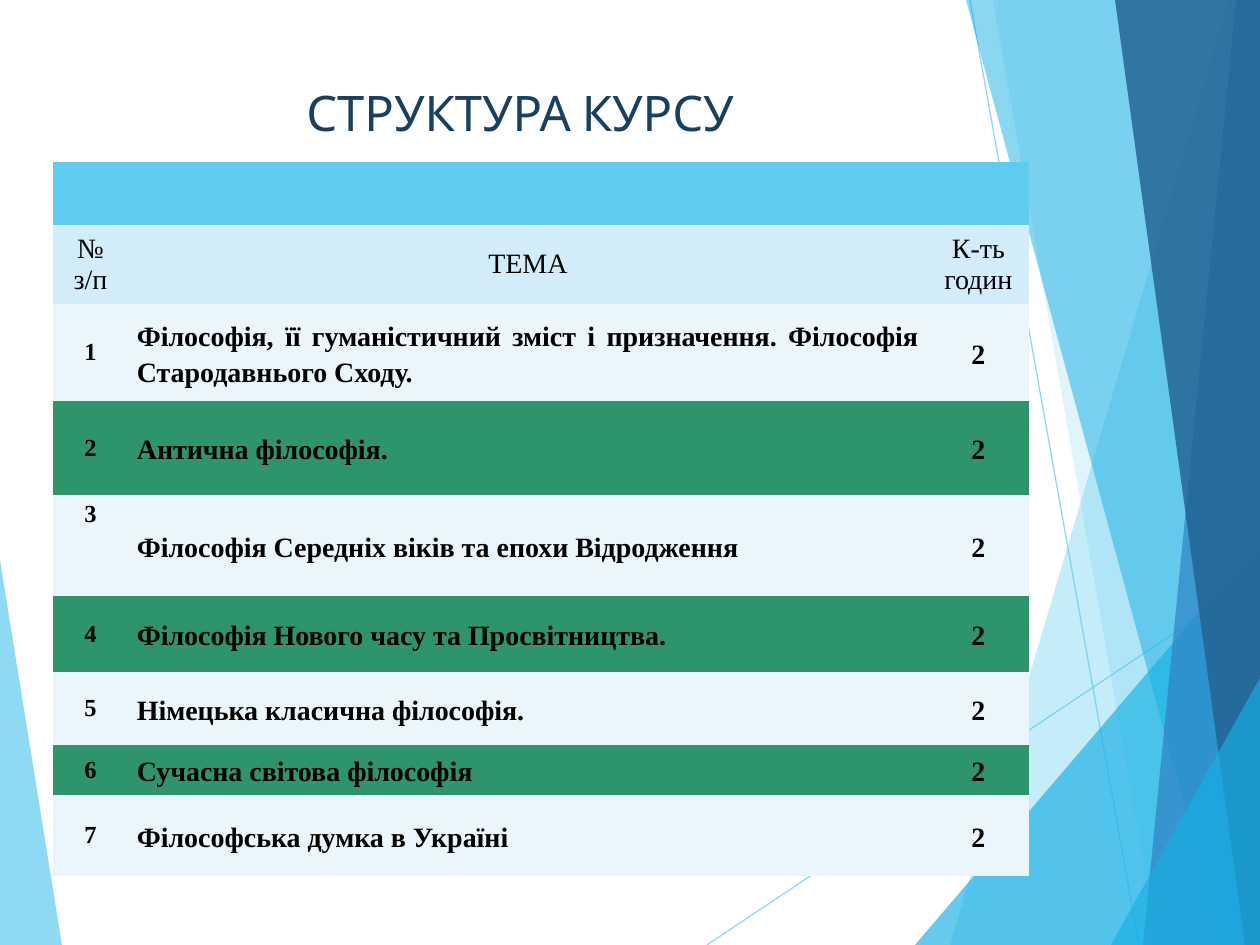
from dataclasses import dataclass

from lxml.etree import SubElement
from pptx import Presentation
from pptx.dml.color import RGBColor
from pptx.enum.shapes import MSO_CONNECTOR_TYPE as CONN
from pptx.enum.text import MSO_ANCHOR as ANCHOR, PP_ALIGN as ALIGN
from pptx.oxml.ns import qn
from pptx.util import Emu, Pt

PX = 914400 // 126  # EMU in one px
WIDTH, HEIGHT = 1260, 945
NO_GRID_STYLE = "{2D5ABB26-0587-4C30-8999-92F81FD0307C}"


@dataclass(frozen=True)
class Theme:
    title_font: str = "Cabin"
    table_font: str = "Times New Roman"
    title_size: int = 28
    text_size: int = 16
    number_size: int = 14
    title: str = "174162"
    text: str = "000000"
    sky: str = "5FCBEF"
    cyan: str = "17B0E4"
    blue: str = "2E83C3"
    navy: str = "226292"
    heading_row: str = "D2ECF9"
    light_row: str = "EAF6FC"
    green_row: str = "2E946B"


THEME = Theme()

# Start point, x at the bottom, x of the vertical edge, colour, opacity %
FACETS = [
    ((0, 560), 62, 0, THEME.sky, 70),
    ((1229, 0), 950, WIDTH, THEME.sky, 36),
    ((993, 0), 1158, WIDTH, THEME.sky, 20),
    ((WIDTH, 541), 915, WIDTH, THEME.cyan, 66),
    ((966, 0), 1222, WIDTH, THEME.cyan, 50),
    ((1236, 0), 1143, WIDTH, THEME.blue, 70),
    ((1115, 0), 1245, WIDTH, THEME.navy, 82),
    ((WIDTH, 678), 1111, WIDTH, THEME.cyan, 66),
]
RAYS = [((707, HEIGHT), (WIDTH, 576)), ((970, 0), (1139, HEIGHT))]

COLUMNS = [75, 800, 101]
ROWS = [63, 79, 97, 94, 101, 76, 73, 50, 81]
HEADINGS = ["№ з/п", "ТЕМА", "К-ть годин"]
TOPICS = [
    "Філософія, її гуманістичний зміст і призначення. Філософія Стародавнього Сходу.",
    "Антична філософія.",
    "Філософія Середніх віків та епохи Відродження",
    "Філософія Нового часу та Просвітництва.",
    "Німецька класична філософія.",
    "Сучасна світова філософія",
    "Філософська думка в Україні",
]
HOURS = "2"


def px(*values):
    return [Emu(v * PX) for v in values]


def set_fill(fill, color):
    fill.solid()
    fill.fore_color.rgb = RGBColor.from_string(color)


def set_alpha(fill_parent, opacity):
    color = next(fill_parent.iter(qn("a:srgbClr")))
    SubElement(color, qn("a:alpha")).set("val", str(opacity * 1000))


def set_text(tf, text, font, size, color, align, bold=False):
    tf.text = text
    p = tf.paragraphs[0]
    p.alignment = align
    p.font.name = font
    p.font.size = Pt(size)
    p.font.bold = bold
    p.font.color.rgb = RGBColor.from_string(color)
    return p


def add_facet(slide, start, bottom_x, edge_x, color, opacity):
    builder = slide.shapes.build_freeform(*start, scale=PX)
    corners = [(bottom_x, HEIGHT), (edge_x, HEIGHT), (edge_x, start[1])]
    builder.add_line_segments(corners, close=True)
    s = builder.convert_to_shape()
    s.shadow.inherit = False
    s.line.fill.background()
    set_fill(s.fill, color)
    set_alpha(s.fill._xPr, opacity)


def add_ray(slide, start, end):
    line = slide.shapes.add_connector(CONN.STRAIGHT, *px(*start, *end))
    line.line.width = Pt(0.75)
    line.line.color.rgb = RGBColor.from_string(THEME.sky)
    sp = line._element.spPr
    set_alpha(sp, 70)
    SubElement(sp, qn("a:effectLst"))


def set_title(slide):
    s = slide.shapes.title
    s.left, s.top, s.width, s.height = px(205, 76, 630, 70)
    tf = s.text_frame
    tf.vertical_anchor = ANCHOR.TOP
    set_text(tf, "СТРУКТУРА КУРСУ", THEME.title_font, THEME.title_size,
             THEME.title, ALIGN.CENTER)


def fill_cell(cell, text, align, size=THEME.text_size, bold=False, body=False):
    cell.vertical_anchor = ANCHOR.MIDDLE
    p = set_text(cell.text_frame, text, THEME.table_font, size, THEME.text,
                 align, bold)
    if body:
        p.line_spacing = 1.15
        cell.margin_left, cell.margin_right = px(9, 9)
        cell.margin_top = cell.margin_bottom = 0


def add_course_table(slide):
    frame = slide.shapes.add_table(len(ROWS), len(COLUMNS),
                                   *px(53, 162, sum(COLUMNS), sum(ROWS)))
    table = frame.table
    table._tbl.tblPr.find(qn("a:tableStyleId")).text = NO_GRID_STYLE
    for column, width in zip(table.columns, COLUMNS):
        column.width = Emu(width * PX)
    for row, height in zip(table.rows, ROWS):
        row.height = Emu(height * PX)

    # Row fills: banner, headings, then alternating topics
    bands = [THEME.light_row, THEME.green_row]
    fills = [THEME.sky, THEME.heading_row]
    fills += [bands[i % 2] for i in range(len(TOPICS))]
    for row, color in zip(table.rows, fills):
        for cell in row.cells:
            set_fill(cell.fill, color)
    table.cell(0, 0).merge(table.cell(0, len(COLUMNS) - 1))

    # Headings
    for col, heading in enumerate(HEADINGS):
        fill_cell(table.cell(1, col), heading, ALIGN.CENTER)

    # Topics
    for number, topic in enumerate(TOPICS, 1):
        num_cell, topic_cell, hours_cell = table.rows[number + 1].cells
        fill_cell(num_cell, str(number), ALIGN.CENTER, THEME.number_size, True)
        fill_cell(topic_cell, topic, ALIGN.JUSTIFY, bold=True, body=True)
        fill_cell(hours_cell, HOURS, ALIGN.CENTER, bold=True, body=True)
    table.cell(4, 0).vertical_anchor = ANCHOR.TOP


def main():
    prs = Presentation()
    prs.slide_width, prs.slide_height = px(WIDTH, HEIGHT)
    slide = prs.slides.add_slide(prs.slide_layouts[5])
    # Background facets and rays
    left_facet, *right_facets = FACETS
    add_facet(slide, *left_facet)
    for ray in RAYS:
        add_ray(slide, *ray)
    for facet in right_facets:
        add_facet(slide, *facet)
    # Content
    set_title(slide)
    add_course_table(slide)
    prs.save("out.pptx")


if __name__ == "__main__":
    main()
